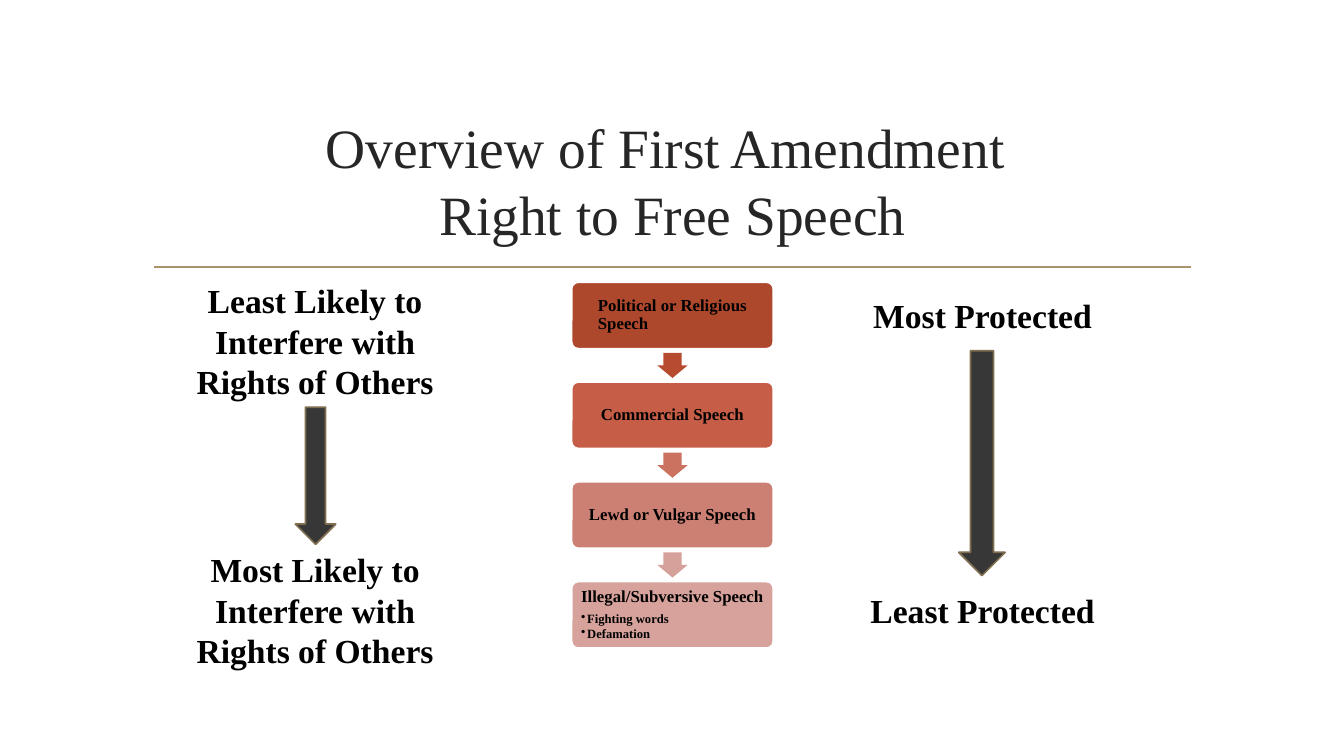
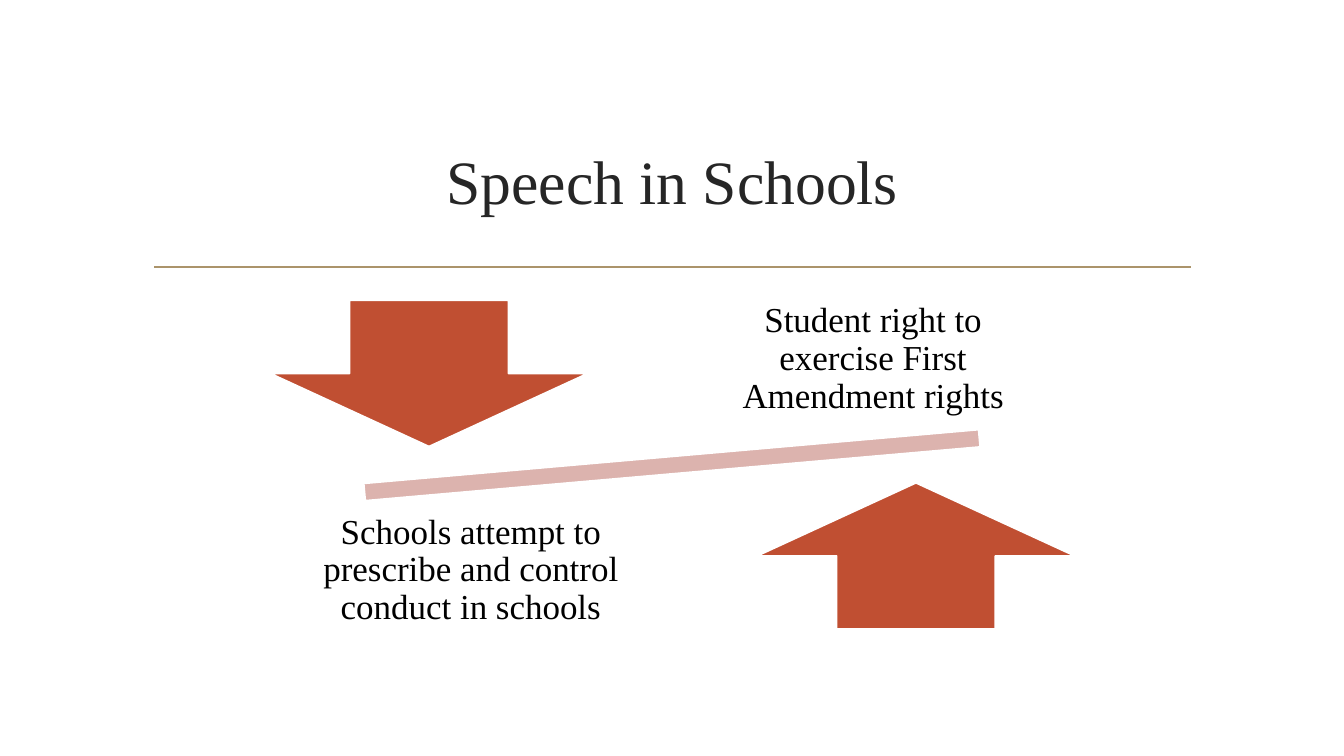
from dataclasses import dataclass

from lxml.etree import SubElement
from pptx import Presentation
from pptx.dml.color import RGBColor
from pptx.enum.shapes import MSO_CONNECTOR, MSO_SHAPE as Shape
from pptx.enum.text import MSO_ANCHOR as Anchor, PP_ALIGN as Align
from pptx.oxml.ns import qn
from pptx.util import Emu, Pt


@dataclass(frozen=True)
class Theme:
    font: str = "Times New Roman"
    # Colours
    title: str = "262626"
    text: str = "000000"
    rule: str = "AB946B"
    outline: str = "FFFFFF"
    scale_arrow: str = "373737"
    scale_edge: str = "7F6D4F"
    balance_arrow: str = "C04F32"
    beam: str = "DCB3AE"
    cards: tuple = ("AE482D", "C65D47", "CC8073", "D6A29B")
    steps: tuple = ("B74B30", "CB7261", "D6A19B")
    # Sizes in points
    title_size: float = 44
    long_title_size: float = 39.6
    label_size: float = 24
    balance_size: float = 25
    card_size: float = 12
    bullet_size: float = 9
    line_width: float = 1.25
    tight: float = 0.9


THEME = Theme()
EMU_PER_PX = 9144  # 100 px to the inch


def px(length):
    return Emu(length * EMU_PER_PX)


def box(left, top, width, height):
    return px(left), px(top), px(width), px(height)


def rgb(code):
    return RGBColor.from_string(code)


# Text
def set_frame(frame, anchor=Anchor.TOP, inset=None):
    frame.word_wrap = True
    frame.vertical_anchor = anchor
    if inset is not None:
        frame.margin_left = frame.margin_right = px(inset)
        frame.margin_top = frame.margin_bottom = px(inset)


def add_run(paragraph, text, size, color=THEME.text, bold=False):
    run = paragraph.add_run()
    run.text = text
    font = run.font
    font.name, font.size, font.bold = THEME.font, Pt(size), bold
    font.color.rgb = rgb(color)


def add_text(slide, place, text, size, bold=False, spacing=None, **frame_options):
    frame = slide.shapes.add_textbox(*box(*place)).text_frame
    set_frame(frame, **frame_options)
    paragraph = frame.paragraphs[0]
    paragraph.alignment = Align.CENTER
    if spacing:
        paragraph.line_spacing = spacing
    add_run(paragraph, text, size, bold=bold)


def add_bullet(frame, text):
    paragraph = frame.add_paragraph()
    properties = paragraph._p.get_or_add_pPr()
    properties.set("marL", str(px(6)))
    properties.set("indent", str(px(-6)))
    SubElement(properties, qn("a:buChar")).set("char", "•")
    paragraph.alignment = Align.LEFT
    paragraph.line_spacing = THEME.tight
    paragraph.space_after = Pt(1.4)
    add_run(paragraph, text, THEME.bullet_size, bold=True)


# Shapes
def add_figure(slide, kind, place, fill, line=None, adjustments=()):
    figure = slide.shapes.add_shape(kind, *box(*place))
    figure.shadow.inherit = False
    figure.fill.solid()
    figure.fill.fore_color.rgb = rgb(fill)
    if line:
        figure.line.color.rgb = rgb(line)
        figure.line.width = Pt(THEME.line_width)
    else:
        figure.line.fill.background()
    for index, value in enumerate(adjustments):
        figure.adjustments[index] = value
    return figure


def add_card(slide, place, fill, heading, bullets):
    card = add_figure(slide, Shape.ROUNDED_RECTANGLE, place, fill, THEME.outline, [0.1])
    frame = card.text_frame
    set_frame(frame, Anchor.MIDDLE, inset=5)
    frame._txBody.bodyPr.set("anchorCtr", "1")
    paragraph = frame.paragraphs[0]
    paragraph.alignment = Align.LEFT
    paragraph.line_spacing = THEME.tight
    paragraph.space_after = Pt(4.2)
    add_run(paragraph, heading, THEME.card_size, bold=True)
    for bullet in bullets:
        add_bullet(frame, bullet)


# Shared title and rule
def add_titled_slide(deck, lines, size):
    slide = deck.slides.add_slide(deck.slide_layouts[6])
    rule = slide.shapes.add_connector(
        MSO_CONNECTOR.STRAIGHT, px(153), px(265), px(1181), px(265))
    rule.line.color.rgb = rgb(THEME.rule)
    rule.line.width = Pt(THEME.line_width)
    SubElement(rule._element.spPr, qn("a:effectLst"))

    frame = slide.shapes.add_textbox(*box(142, 107, 1050, 143)).text_frame
    set_frame(frame, Anchor.MIDDLE)
    paragraph = frame.paragraphs[0]
    paragraph.alignment = Align.CENTER
    for index, line in enumerate(lines):
        if index:
            paragraph.add_line_break()
        add_run(paragraph, line, size, THEME.title)
    return slide


def build_overview(deck):
    slide = add_titled_slide(
        deck, ["Overview of First Amendment ", "Right to Free Speech"],
        THEME.long_title_size)

    # Kinds of speech, from most to least protected
    kinds = [
        ("Political or Religious Speech", []),
        ("Commercial Speech", []),
        ("Lewd or Vulgar Speech", []),
        ("Illegal/Subversive Speech", ["Fighting words", "Defamation"]),
    ]
    first_top, pitch = 280, 99
    for index, (heading, bullets) in enumerate(kinds):
        place = (567, first_top + index * pitch, 200, 66)
        add_card(slide, place, THEME.cards[index], heading, bullets)
    for index, fill in enumerate(THEME.steps):
        place = (652, first_top + 70 + index * pitch, 30, 25)
        add_figure(slide, Shape.DOWN_ARROW, place, fill, adjustments=[0.6, 0.5])

    # Scales on both sides
    labels = [
        ((842, 288, 265, 50), "Most Protected"),
        ((842, 580, 265, 50), "Least Protected"),
        ((180, 273, 265, 131), "Least Likely to Interfere with Rights of Others"),
        ((180, 540, 265, 131), "Most Likely to Interfere with Rights of Others"),
    ]
    for place, text in labels:
        add_text(slide, place, text, THEME.label_size, bold=True)
    for place in [(951, 348, 46, 223), (293, 404, 40, 136)]:
        add_figure(slide, Shape.DOWN_ARROW, place, THEME.scale_arrow, THEME.scale_edge)


def build_schools(deck):
    slide = add_titled_slide(deck, ["Speech in Schools"], THEME.title_size)

    # Tilted beam between two opposing forces
    beam = add_figure(slide, Shape.MATH_MINUS, (250, 425, 833, 73),
                      THEME.beam, THEME.outline)
    beam.rotation = 355
    forces = [
        (Shape.DOWN_ARROW, (268, 298), (299, 490),
         "Schools attempt to prescribe and control conduct in schools"),
        (Shape.UP_ARROW, (751, 479), (698, 280),
         "Student right to exercise First Amendment rights"),
    ]
    for arrow, arrow_corner, text_corner, text in forces:
        add_figure(slide, arrow, (*arrow_corner, 315, 145),
                   THEME.balance_arrow, THEME.outline)
        add_text(slide, (*text_corner, 336, 152), text, THEME.balance_size,
                 spacing=THEME.tight, anchor=Anchor.MIDDLE, inset=19)


def main():
    deck = Presentation()
    deck.slide_width, deck.slide_height = px(1333), px(750)
    build_overview(deck)
    build_schools(deck)
    deck.save("out.pptx")


if __name__ == "__main__":
    main()
